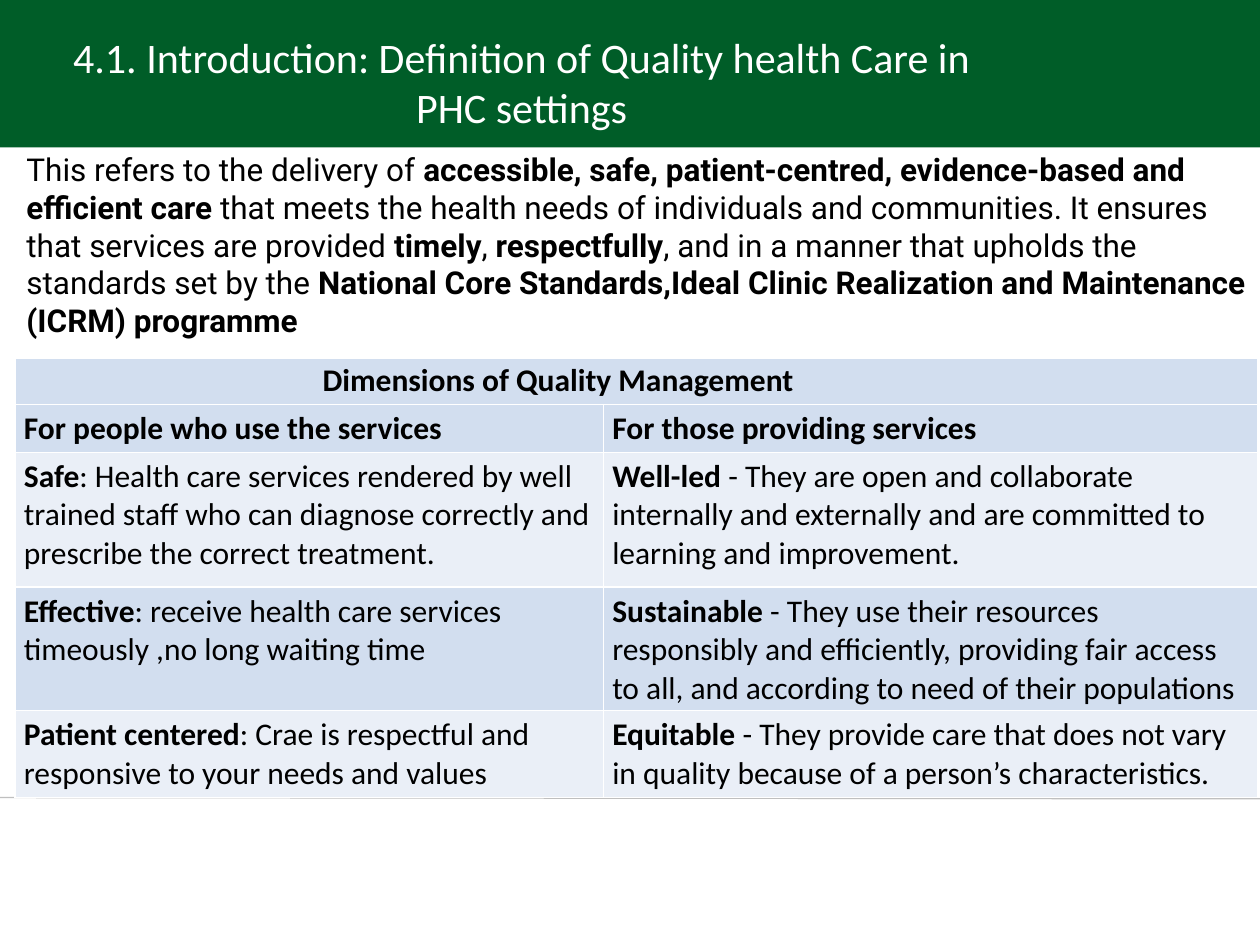
from typing import NamedTuple

from lxml import etree
from pptx import Presentation
from pptx.dml.color import RGBColor
from pptx.enum.shapes import MSO_CONNECTOR, MSO_SHAPE
from pptx.enum.text import MSO_ANCHOR, PP_ALIGN
from pptx.oxml.ns import qn
from pptx.util import Inches, Pt

RECTANGLE = MSO_SHAPE.RECTANGLE
STRAIGHT = MSO_CONNECTOR.STRAIGHT
TOP = MSO_ANCHOR.TOP
CENTER = PP_ALIGN.CENTER
LEFT = PP_ALIGN.LEFT

COLUMNS, ROWS = 100, 75
UNIT = Inches(0.1)
COLORS = {
    "green": "005D28",
    "rule": "BFBFBF",
    "white": "FFFFFF",
    "black": "000000",
    "band": "D2DEEF",
    "pale": "EAEFF7",
}
MARGINS = {
    "margin_left": Inches(0.07),
    "margin_right": Inches(0.07),
    "margin_top": Inches(0.04),
    "margin_bottom": Inches(0.04),
}
HEADING_INDENT = 24.4


class Area(NamedTuple):
    left: float
    top: float
    width: float
    height: float


class Style(NamedTuple):
    font: str
    size: int
    color: str
    align: PP_ALIGN = LEFT


class Row(NamedTuple):
    height: float
    fill: str
    texts: tuple[str, ...]
    space_after: int = 0


TITLE_STYLE = Style("Calibri", 24, "white", CENTER)
BODY_STYLE = Style("Roboto", 18, "black")
TABLE_STYLE = Style("Calibri", 18, "black")

TITLE = "4.1. Introduction: Definition of Quality health Care in PHC settings"
DEFINITION = (
    "This refers to the delivery of **accessible, safe, patient-centred, "
    "evidence-based and efficient care** that meets the health needs of "
    "individuals and communities. It ensures that services are provided "
    "**timely**, **respectfully**, and in a manner that upholds the standards "
    "set by the **National Core Standards,Ideal Clinic Realization and "
    "Maintenance (ICRM) programme**"
)
TABLE_AREA = Area(1.2, 28.3, 98.6, 34.2)
TABLE_COLUMNS = (46.7, 51.9)
TABLE_ROWS = (
    Row(3.6, "band", ("**Dimensions of Quality Management**",)),
    Row(3.6, "band", (
        "**For people who use the services**",
        "**For those providing services**",
    )),
    Row(10.7, "pale", (
        "**Safe**: Health care services rendered by well trained staff who can "
        "diagnose correctly and prescribe the correct treatment.",
        "**Well-led** - They are open and collaborate internally and "
        "externally and are committed to learning and improvement.",
    ), 12),
    Row(9.4, "band", (
        "**Effective**: receive health care services timeously ,no long waiting time",
        "**Sustainable** - They use their resources responsibly and efficiently, "
        "providing fair access to all, and according to need of their populations",
    )),
    Row(6.9, "pale", (
        "**Patient centered**: Crae is respectful and responsive to your needs and values",
        "**Equitable** - They provide care that does not vary in quality "
        "because of a person’s characteristics.",
    ), 12),
)


def color(name: str) -> RGBColor:
    return RGBColor.from_string(COLORS[name])


def units(values: tuple) -> list[int]:
    return [round(value * UNIT) for value in values]


def apply(target, values: dict) -> None:
    for name, value in values.items():
        setattr(target, name, value)


def write(para, text: str, style: Style) -> None:
    para.alignment = style.align
    for index, part in enumerate(text.split("**")):
        if part:
            span = para.add_run()
            span.text = part
            apply(span.font, {
                "name": style.font,
                "size": Pt(style.size),
                "bold": index % 2 == 1,
            })
            span.font.color.rgb = color(style.color)


def add_text(page, area: Area, text: str, style: Style, margins: dict) -> None:
    frame = page.shapes.add_textbox(*units(area)).text_frame
    apply(frame, {"word_wrap": True, "vertical_anchor": TOP, **margins})
    write(frame.paragraphs[0], text, style)


def add_banner(page, area: Area) -> None:
    banner = page.shapes.add_shape(RECTANGLE, *units(area))
    banner.shadow.inherit = False
    banner.fill.solid()
    banner.fill.fore_color.rgb = color("green")
    banner.line.fill.background()


def add_rule(page, ends: tuple) -> None:
    rule = page.shapes.add_connector(STRAIGHT, *units(ends))
    rule.line.color.rgb = color("rule")
    rule.line.width = Pt(0.75)
    etree.SubElement(rule._element.spPr, qn("a:effectLst"))


def add_borders(cell, top_width: int) -> None:
    properties = cell._tc.get_or_add_tcPr()
    for side, width in (("L", 1), ("R", 1), ("T", top_width), ("B", 1)):
        line = etree.SubElement(properties, qn(f"a:ln{side}"), w=str(Pt(width)))
        fill = etree.SubElement(line, qn("a:solidFill"))
        etree.SubElement(fill, qn("a:srgbClr"), val=COLORS["white"])


def add_dimensions(page) -> None:
    table = page.shapes.add_table(
        len(TABLE_ROWS), len(TABLE_COLUMNS), *units(TABLE_AREA)
    ).table
    apply(table, {"first_row": False, "horz_banding": False})
    for column, width in zip(table.columns, units(TABLE_COLUMNS)):
        column.width = width
    for row_index, row in enumerate(TABLE_ROWS):
        table.rows[row_index].height = round(row.height * UNIT)
        for column_index in range(len(TABLE_COLUMNS)):
            cell = table.cell(row_index, column_index)
            apply(cell, {"vertical_anchor": TOP, **MARGINS})
            add_borders(cell, 3 if row_index == 0 else 1)
            cell.fill.solid()
            cell.fill.fore_color.rgb = color(row.fill)
            if column_index < len(row.texts):
                para = cell.text_frame.paragraphs[0]
                write(para, row.texts[column_index], TABLE_STYLE)
                if column_index == 1:
                    para.space_after = Pt(row.space_after)
    heading = table.cell(0, 0)
    heading.merge(table.cell(0, 1))
    heading.margin_left = round(HEADING_INDENT * UNIT)


def main() -> None:
    deck = Presentation()
    deck.slide_width, deck.slide_height = units((COLUMNS, ROWS))
    page = deck.slides.add_slide(deck.slide_layouts[6])
    add_banner(page, Area(0, 0, COLUMNS, 11.7))
    add_rule(page, (0, 63.3, COLUMNS, 63.4))
    add_text(page, Area(2.8, 2, 77.2, 9.1), TITLE, TITLE_STYLE, {})
    add_text(page, Area(1.4, 11.5, 98.6, 16.9), DEFINITION, BODY_STYLE, MARGINS)
    add_dimensions(page)
    deck.save("out.pptx")


if __name__ == "__main__":
    main()
